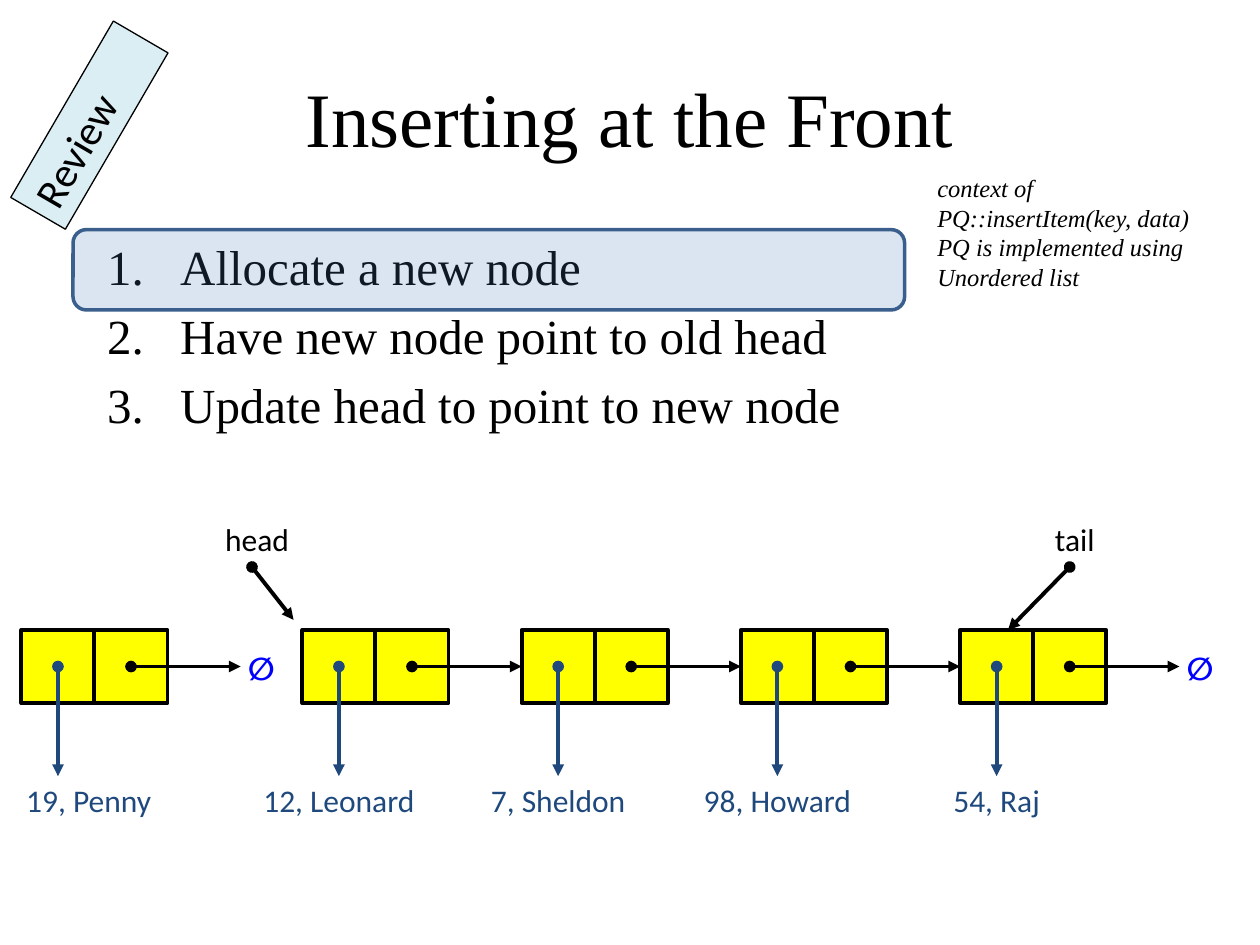
"""Build the slide on inserting a node at the front of a linked list."""
from lxml.etree import SubElement
from pptx import Presentation
from pptx.dml.color import RGBColor
from pptx.enum.shapes import MSO_CONNECTOR as Line, MSO_SHAPE as Shape
from pptx.enum.text import MSO_ANCHOR as Anchor, PP_ALIGN as Align
from pptx.oxml.ns import qn
from pptx.util import Inches, Pt

paint = RGBColor.from_string
SERIF, SANS = "Times New Roman", "Calibri"
BLACK, NAVY, BLUE, YELLOW = "000000", "1F497D", "0000FF", "FFFF00"

deck = Presentation()
deck.slide_width, deck.slide_height = Inches(10), Inches(7.5)
W, H = deck.slide_width, deck.slide_height
CELL, ROW = Inches(0.58), Inches(5)
MIDDLE = ROW + CELL // 2
slide = deck.slides.add_slide(deck.slide_layouts[1])
shapes = slide.shapes


def write(holder, *lines, size=18, font=SANS, color=BLACK, align=Align.CENTER,
          anchor=Anchor.TOP, bold=False, italic=False, wrap=False):
    frame = holder.text_frame
    frame.word_wrap, frame.vertical_anchor = wrap, anchor
    for number, line in enumerate(lines):
        paragraph = frame.add_paragraph() if number else frame.paragraphs[0]
        paragraph.text, paragraph.alignment = line, align
        for run in paragraph.runs:
            run.font.size, run.font.name = Pt(size), font
            run.font.bold, run.font.italic = bold, italic
            run.font.color.rgb = paint(color)


def arrow(x1, y1, x2, y2, color=BLACK):
    link = shapes.add_connector(Line.STRAIGHT, *map(int, (x1, y1, x2, y2)))
    link.line.width, link.line.color.rgb = Pt(2.25), paint(color)
    stroke = link.line._get_or_add_ln()
    SubElement(stroke, qn("a:headEnd"), type="oval")
    SubElement(stroke, qn("a:tailEnd"), type="triangle")
    SubElement(link._element.spPr, qn("a:effectLst"))


title, steps = shapes.title, slide.placeholders[1]
title.left, title.top = int(0.05 * W), int(0.04 * H)
title.width, title.height = int(0.9 * W), int(H / 6)
write(title, "Inserting at the Front", size=44, font=SERIF,
      anchor=Anchor.MIDDLE, wrap=True)

steps.left, steps.top = int(0.075 * W), int(0.244 * H)
steps.width, steps.height = int(0.85 * W), int(0.6 * H)
write(steps, "Allocate a new node", "Have new node point to old head",
      "Update head to point to new node",
      size=28, font=SERIF, align=Align.LEFT, wrap=True)
for step in steps.text_frame.paragraphs:
    numbering = step._p.get_or_add_pPr()
    numbering.set("marL", str(CELL))
    numbering.set("indent", str(-CELL))
    SubElement(numbering, qn("a:buFont"), typeface="+mj-lt")
    SubElement(numbering, qn("a:buAutoNum"), type="arabicPeriod")

first = Inches(2.4)
nodes = [(Inches(0.17), "19, Penny", 0.92)]
nodes += [(first + 3 * CELL * place, entry, 0.5) for place, entry in
          enumerate(["12, Leonard", "7, Sheldon", "98, Howard", "54, Raj"])]
for left, entry, center in nodes:
    for column in range(2):
        box = shapes.add_shape(Shape.RECTANGLE, left + column * CELL, ROW, CELL, CELL)
        box.shadow.inherit = False
        box.fill.solid()
        box.fill.fore_color.rgb = paint(YELLOW)
        box.line.color.rgb, box.line.width = paint(BLACK), Pt(2.25)
    label = shapes.add_textbox(int(left + (center - 1.25) * CELL), int(0.82 * H),
                               int(2.5 * CELL), int(0.053 * H))
    write(label, entry, color=NAVY)
for left, entry, center in nodes:
    arrow(left + CELL / 2, MIDDLE, left + CELL / 2, MIDDLE + 1.5 * CELL, NAVY)
    arrow(left + 1.5 * CELL, MIDDLE, left + 3 * CELL, MIDDLE)
for left in (nodes[0][0], nodes[-1][0]):
    null = shapes.add_textbox(int(left + 2.93 * CELL), int(0.68 * H),
                              int(0.66 * CELL), int(0.048 * H))
    write(null, "∅", color=BLUE, bold=True)

for pointer, start, tip, tip_row in (("head", 0.2, 0.233, 0.656),
                                     ("tail", 0.849, 0.8, 2 / 3)):
    arrow(start * W, 0.6 * H, tip * W, tip_row * H)
    label = shapes.add_textbox(int((start + 0.004 - 0.036) * W), int(0.544 * H),
                               int(0.072 * W), int(0.053 * H))
    write(label, pointer)

review = shapes.add_shape(Shape.RECTANGLE, int(-0.01 * W), int(0.099 * H),
                          int(0.162 * W), int(0.067 * H))
review.rotation = 300.2
review.shadow.inherit = False
review.fill.solid()
review.fill.fore_color.rgb = paint("DBEEF4")
review.line.color.rgb, review.line.width = paint(BLACK), Pt(0.75)
write(review, "Review", size=24, align=Align.LEFT, wrap=True)

highlight = shapes.add_shape(Shape.ROUNDED_RECTANGLE, int(0.058 * W), int(0.243 * H),
                             int(0.66 * W), int(0.085 * H))
highlight.shadow.inherit = False
highlight.fill.solid()
highlight.fill.fore_color.rgb = paint("4F81BD")
tint = highlight._element.spPr.find(qn("a:solidFill"))[0]
SubElement(tint, qn("a:alpha"), val="20000")
highlight.line.color.rgb, highlight.line.width = paint("3A5F8C"), Pt(2)

context = shapes.add_textbox(int(0.734 * W), int(0.177 * H),
                             int(0.222 * W), int(0.139 * H))
write(context, "context of\vPQ::insertItem(key, data)", "PQ is implemented using",
      "Unordered list", size=14, font=SERIF, align=Align.LEFT, italic=True)

deck.save("out.pptx")
